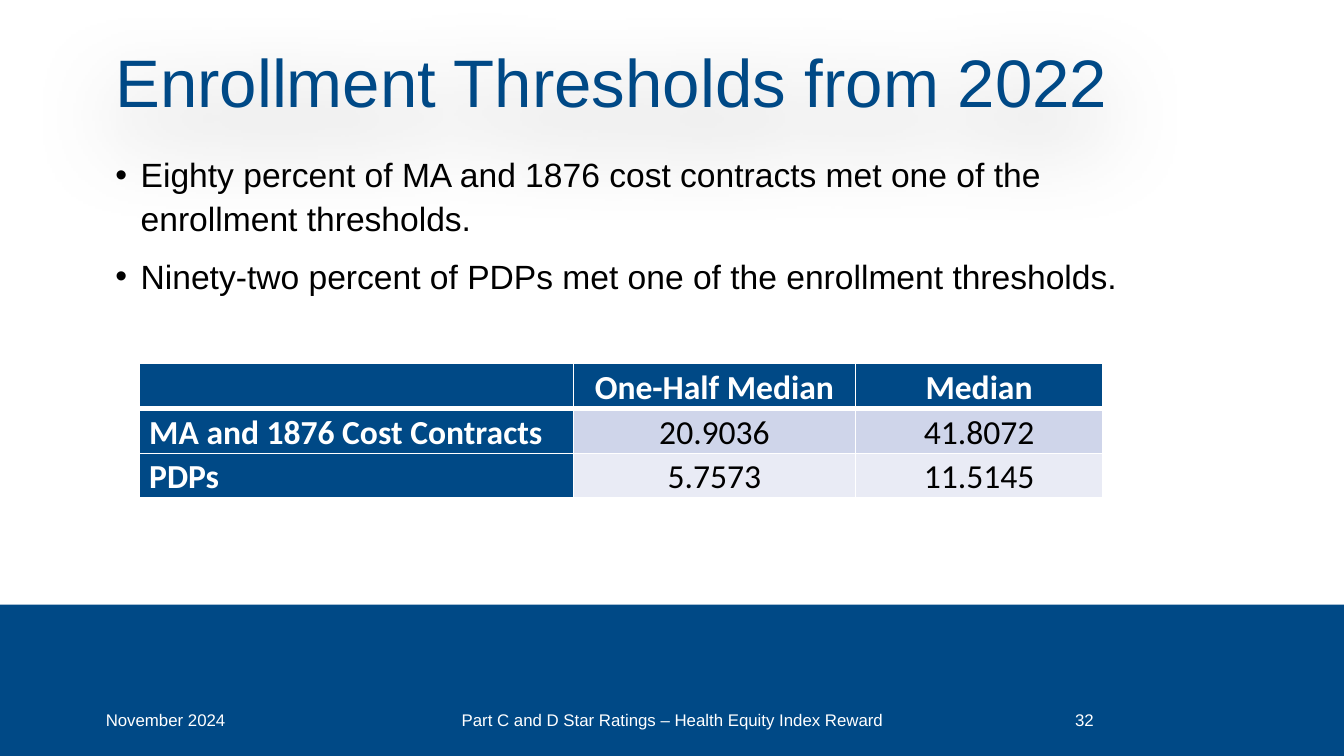
from lxml import etree
from pptx import Presentation
from pptx.dml.color import RGBColor
from pptx.enum.shapes import MSO_SHAPE
from pptx.enum.text import MSO_ANCHOR, PP_ALIGN
from pptx.oxml.ns import qn
from pptx.util import Cm, Pt

RECTANGLE = MSO_SHAPE.RECTANGLE
TOP, MIDDLE, BOTTOM = MSO_ANCHOR.TOP, MSO_ANCHOR.MIDDLE, MSO_ANCHOR.BOTTOM
LEFT, CENTER = PP_ALIGN.LEFT, PP_ALIGN.CENTER

COLORS = {
    "navy": "004986",
    "white": "FFFFFF",
    "black": "000000",
    "band_dark": "CFD5EA",
    "band_light": "E9EBF5",
}


def rgb(name):
    return RGBColor.from_string(COLORS[name])


class SlideBuilder:
    """Holds the slide and its text style."""

    font = "Arial"
    table_font = "Calibri"
    line_spacing = 1.07

    def __init__(self, slide):
        self.slide = slide

    def add_run(self, paragraph, text, size, color, font=None, bold=False):
        run = paragraph.add_run()
        run.text = text
        run.font.name = font or self.font
        run.font.size = Pt(size)
        run.font.bold = bold
        run.font.color.rgb = rgb(color)

    def band(self, left, top, width, height, color):
        shape = self.slide.shapes.add_shape(
            RECTANGLE, Cm(left), Cm(top), Cm(width), Cm(height))
        shape.shadow.inherit = False
        shape.fill.solid()
        shape.fill.fore_color.rgb = rgb(color)
        shape.line.fill.background()

    def text(self, box, lines, size, color, anchor=MIDDLE, align=LEFT,
             spacing=1.0, after=0, bullet=False):
        shape = self.slide.shapes.add_textbox(*(Cm(length) for length in box))
        frame = shape.text_frame
        frame.word_wrap = True
        frame.vertical_anchor = anchor
        for index, line in enumerate(lines):
            paragraph = frame.add_paragraph() if index else frame.paragraphs[0]
            paragraph.alignment = align
            paragraph.line_spacing = spacing
            paragraph.space_after = Pt(after)
            if bullet:
                self.add_bullet(paragraph)
            self.add_run(paragraph, line, size, color)
        return shape

    def add_bullet(self, paragraph):
        properties = paragraph._p.get_or_add_pPr()
        properties.set("marL", str(Cm(0.48)))
        properties.set("indent", str(-Cm(0.48)))
        etree.SubElement(properties, qn("a:buFont"), typeface="Arial")
        etree.SubElement(properties, qn("a:buChar"), char="•")

    def soft_shadow(self, shape):
        effects = etree.SubElement(shape._element.spPr, qn("a:effectLst"))
        shadow = etree.SubElement(
            effects, qn("a:outerShdw"), blurRad=str(Pt(50)),
            dist=str(Cm(0.6)), dir="5400000", algn="t", rotWithShape="0")
        color = etree.SubElement(shadow, qn("a:srgbClr"), val=COLORS["black"])
        etree.SubElement(color, qn("a:alpha"), val="40000")

    def cell_borders(self, cell, top, bottom):
        properties = cell._tc.get_or_add_tcPr()
        for tag, width in (("lnL", 1), ("lnR", 1), ("lnT", top), ("lnB", bottom)):
            line = etree.SubElement(properties, qn(f"a:{tag}"), w=str(Pt(width)))
            fill = etree.SubElement(line, qn("a:solidFill"))
            etree.SubElement(fill, qn("a:srgbClr"), val=COLORS["white"])

    def table(self, left, top, widths, heights, rows, bands):
        table = self.slide.shapes.add_table(
            len(rows), len(widths), Cm(left), Cm(top),
            Cm(sum(widths)), Cm(sum(heights))).table
        for column, width in zip(table.columns, widths):
            column.width = Cm(width)
        for row_index, values in enumerate(rows):
            table.rows[row_index].height = Cm(heights[row_index])
            for column_index, value in enumerate(values):
                cell = table.cell(row_index, column_index)
                heading = row_index == 0 or column_index == 0
                self.cell_borders(cell, top=3 if row_index == 1 else 1,
                                  bottom=3 if row_index == 0 else 1)
                cell.fill.solid()
                cell.fill.fore_color.rgb = rgb(
                    "navy" if heading else bands[row_index - 1])
                cell.margin_left = cell.margin_right = Cm(0.18)
                cell.margin_top = cell.margin_bottom = 0
                cell.vertical_anchor = BOTTOM
                paragraph = cell.text_frame.paragraphs[0]
                paragraph.alignment = CENTER if column_index else LEFT
                paragraph.line_spacing = self.line_spacing
                if value:
                    self.add_run(paragraph, value, 18,
                                 "white" if heading else "black",
                                 self.table_font, heading)


def main():
    presentation = Presentation()
    presentation.slide_width = Cm(25.4)
    presentation.slide_height = Cm(14.29)
    slide = presentation.slides.add_slide(presentation.slide_layouts[6])
    builder = SlideBuilder(slide)

    # Footer band
    builder.band(0, 11.43, 25.4, 2.86, "navy")

    # Title
    title = builder.text((1.93, 0.86, 20.9, 1.55),
                         ["Enrollment Thresholds from 2022"], 36, "navy",
                         anchor=BOTTOM, spacing=builder.line_spacing, after=8)
    builder.soft_shadow(title)

    # Bullets
    builder.text((1.93, 2.74, 20.24, 8.33), [
        "Eighty percent of MA and 1876 cost contracts met one of the "
        "enrollment thresholds.",
        "Ninety-two percent of PDPs met one of the enrollment thresholds.",
    ], 18, "black", anchor=TOP, spacing=builder.line_spacing, after=8,
        bullet=True)

    # Threshold table
    builder.table(2.64, 6.87, [8.2, 5.33, 4.67], [0.86, 0.84, 0.84], [
        ["", "One-Half Median", "Median"],
        ["MA and 1876 Cost Contracts", "20.9036", "41.8072"],
        ["PDPs", "5.7573", "11.5145"],
    ], ["band_dark", "band_light"])

    # Footer: date, title, slide number
    for left, width, text, align in (
            (1.75, 5.72, "November 2024", LEFT),
            (8.41, 8.59, "Part C and D Star Ratings – Health Equity Index Reward",
             CENTER),
            (20.07, 0.97, "32", LEFT)):
        builder.text((left, 13.23, width, 0.76), [text], 9, "white", align=align)

    presentation.save("out.pptx")


if __name__ == "__main__":
    main()
